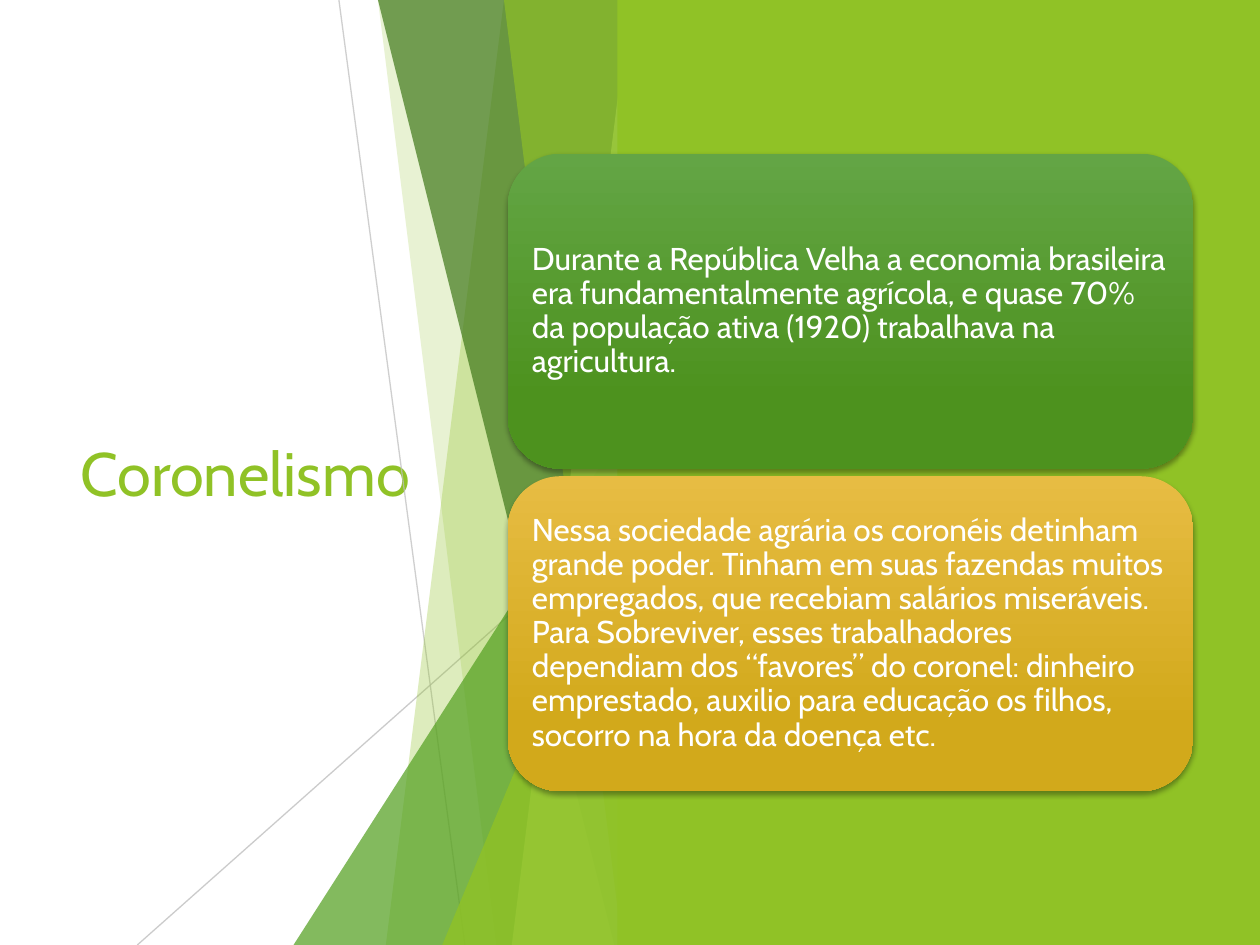
from lxml.etree import SubElement
from pptx import Presentation
from pptx.dml.color import RGBColor
from pptx.enum.shapes import MSO_CONNECTOR, MSO_SHAPE
from pptx.enum.text import MSO_ANCHOR, PP_ALIGN
from pptx.oxml.ns import qn
from pptx.util import Inches, Pt

COLORS = {
    "lime": "90C226",
    "green": "54A021",
    "dark": "3F7819",
    "pale": "C0E474",
    "gray": "BFBFBF",
    "white": "FFFFFF",
    "black": "000000",
    "leaf top": "63A545",
    "leaf end": "4D921E",
    "gold top": "E7BC43",
    "gold end": "D2A91B",
}
FONT = "Cabin"
EDGE = 5
TOP = -0.01
FOOT = 7.5

CARDS = [
    ("leaf", "Durante a República Velha a economia brasileira era "
     "fundamentalmente agrícola, e quase 70% da população ativa (1920) "
     "trabalhava na agricultura."),
    ("gold", "Nessa sociedade agrária os coronéis detinham grande poder. "
     "Tinham em suas fazendas muitos empregados, que recebiam salários "
     "miseráveis. Para Sobreviver, esses trabalhadores dependiam dos "
     "“favores” do coronel: dinheiro emprestado, auxilio para educação os "
     "filhos, socorro na hora da doença etc."),
]


def rgb(name):
    return RGBColor.from_string(COLORS[name])


def set_alpha(fill, alpha):
    for tone in fill._xPr.iter(qn("a:srgbClr")):
        SubElement(tone, qn("a:alpha"), val=str(alpha * 1000))


def paint(shape, color, alpha=100):
    shape.shadow.inherit = False
    shape.line.fill.background()
    shape.fill.solid()
    shape.fill.fore_color.rgb = rgb(color)
    if alpha < 100:
        set_alpha(shape.fill, alpha)


def add_ray(slide, start, end, alpha):
    ray = slide.shapes.add_connector(
        MSO_CONNECTOR.STRAIGHT, *map(Inches, start + end))
    ray.line.width = Pt(0.75)
    ray.line.color.rgb = rgb("gray")
    set_alpha(ray.line.fill, alpha)
    SubElement(ray._element.spPr, qn("a:effectLst"))


def add_band(slide, head, foot, color, alpha):
    pen = slide.shapes.build_freeform(head, TOP, scale=Inches(1))
    pen.add_line_segments([(EDGE, TOP), (EDGE, FOOT), (foot, FOOT)])
    paint(pen.convert_to_shape(), color, alpha)


def add_wedge(slide, left, top, color, alpha):
    wedge = slide.shapes.add_shape(
        MSO_SHAPE.ISOSCELES_TRIANGLE, Inches(left), Inches(top),
        Inches(EDGE - left), Inches(FOOT - top))
    wedge.adjustments[0] = 1
    paint(wedge, color, alpha)


def add_panel(slide, left):
    panel = slide.shapes.add_shape(
        MSO_SHAPE.RECTANGLE, Inches(left), 0, Inches(10 - left), Inches(FOOT))
    paint(panel, "lime")


def add_shade(shape):
    shape.shadow.inherit = False
    glow = SubElement(
        shape._element.spPr.find(qn("a:effectLst")), qn("a:outerShdw"),
        blurRad=str(Pt(3)), dist=str(Pt(2)), dir="5400000", rotWithShape="0")
    tone = SubElement(glow, qn("a:srgbClr"), val=COLORS["black"])
    SubElement(tone, qn("a:alpha"), val="35000")


def add_text(frame, text, size, color):
    frame.word_wrap = True
    frame.vertical_anchor = MSO_ANCHOR.MIDDLE
    para = frame.paragraphs[0]
    para.alignment = PP_ALIGN.LEFT
    run = para.add_run()
    run.text = text
    run.font.name = FONT
    run.font.size = Pt(size)
    run.font.color.rgb = rgb(color)
    return para


def add_title(slide, text):
    title = slide.shapes.title
    title.left, title.top = Inches(0.54), Inches(1.51)
    title.width, title.height = Inches(2.91), Inches(4.48)
    add_text(title.text_frame, text, 35, "lime")


def add_card(slide, top, hue, text):
    card = slide.shapes.add_shape(
        MSO_SHAPE.ROUNDED_RECTANGLE, Inches(4.03), Inches(top),
        Inches(5.44), Inches(2.5))
    card.line.fill.background()
    card.fill.gradient()
    card.fill.gradient_angle = 270
    stops = zip(card.fill.gradient_stops, ("top", "end"), (0, 0.78))
    for stop, part, place in stops:
        stop.color.rgb = rgb(f"{hue} {part}")
        stop.position = place
    add_shade(card)
    frame = card.text_frame
    frame.margin_left = frame.margin_right = Inches(0.07)
    frame.margin_top = frame.margin_bottom = Inches(0.07)
    add_text(frame, text, 18, "white").line_spacing = 0.9


def main():
    deck = Presentation()
    deck.slide_width, deck.slide_height = Inches(10), Inches(7.5)
    slide = deck.slides.add_slide(deck.slide_layouts[5])
    add_title(slide, "Coronelismo")
    add_ray(slide, (2.69, 0), (3.69, FOOT), 75)
    add_ray(slide, (EDGE, 4.03), (1.09, FOOT), 80)
    add_band(slide, 4.21, 2.53, "lime", 30)
    add_band(slide, 2.88, 3.87, "lime", 20)
    add_wedge(slide, 2.33, 3.33, "green", 72)
    add_band(slide, 2.66, 4.68, "dark", 70)
    add_band(slide, 4.78, 3.94, "pale", 70)
    add_band(slide, 3.97, 4.88, "lime", 65)
    add_wedge(slide, 3.51, 3.93, "lime", 80)
    add_panel(slide, 4.9)
    for row, (hue, text) in enumerate(CARDS):
        add_card(slide, 1.22 + row * 2.56, hue, text)
    deck.save("out.pptx")


if __name__ == "__main__":
    main()
